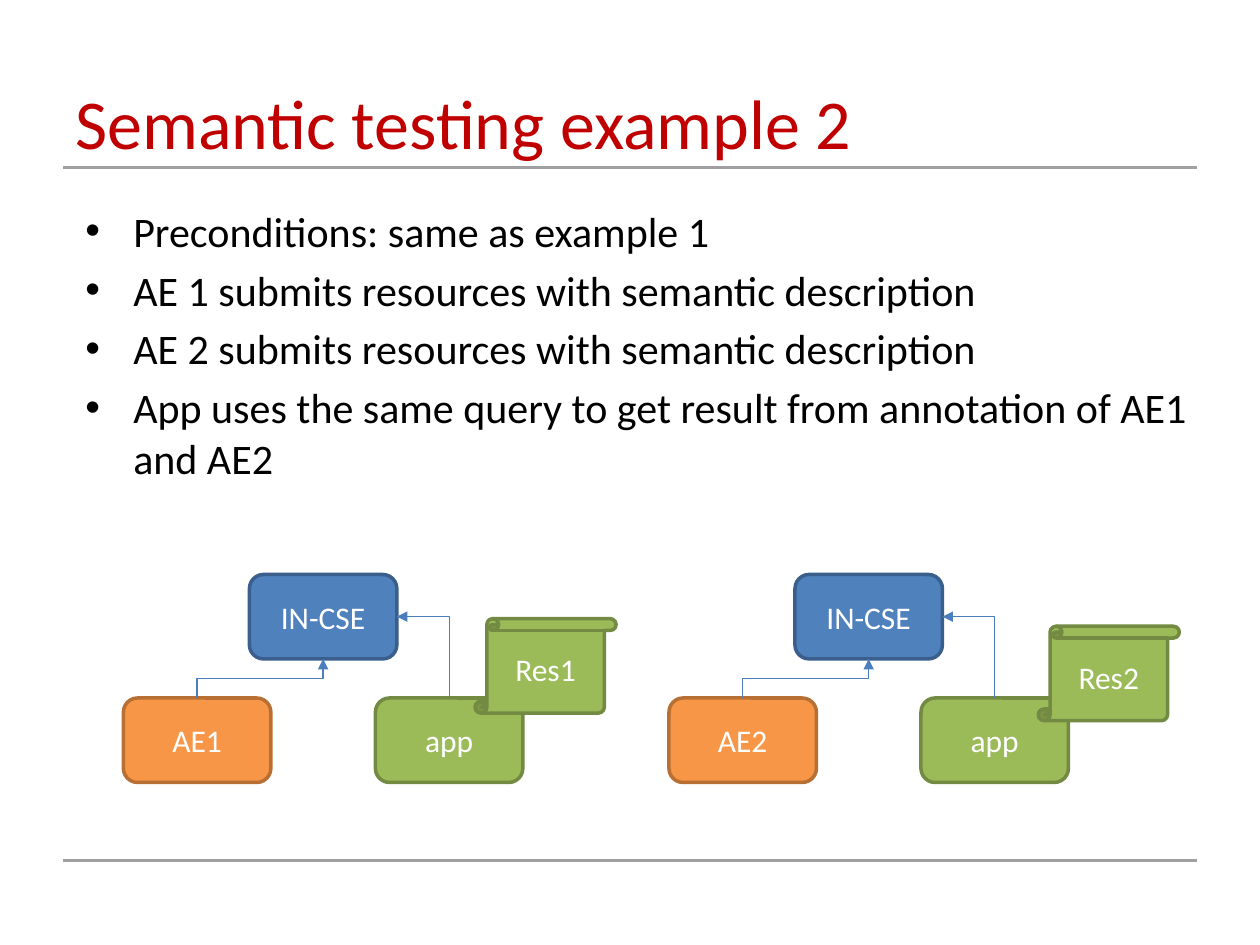
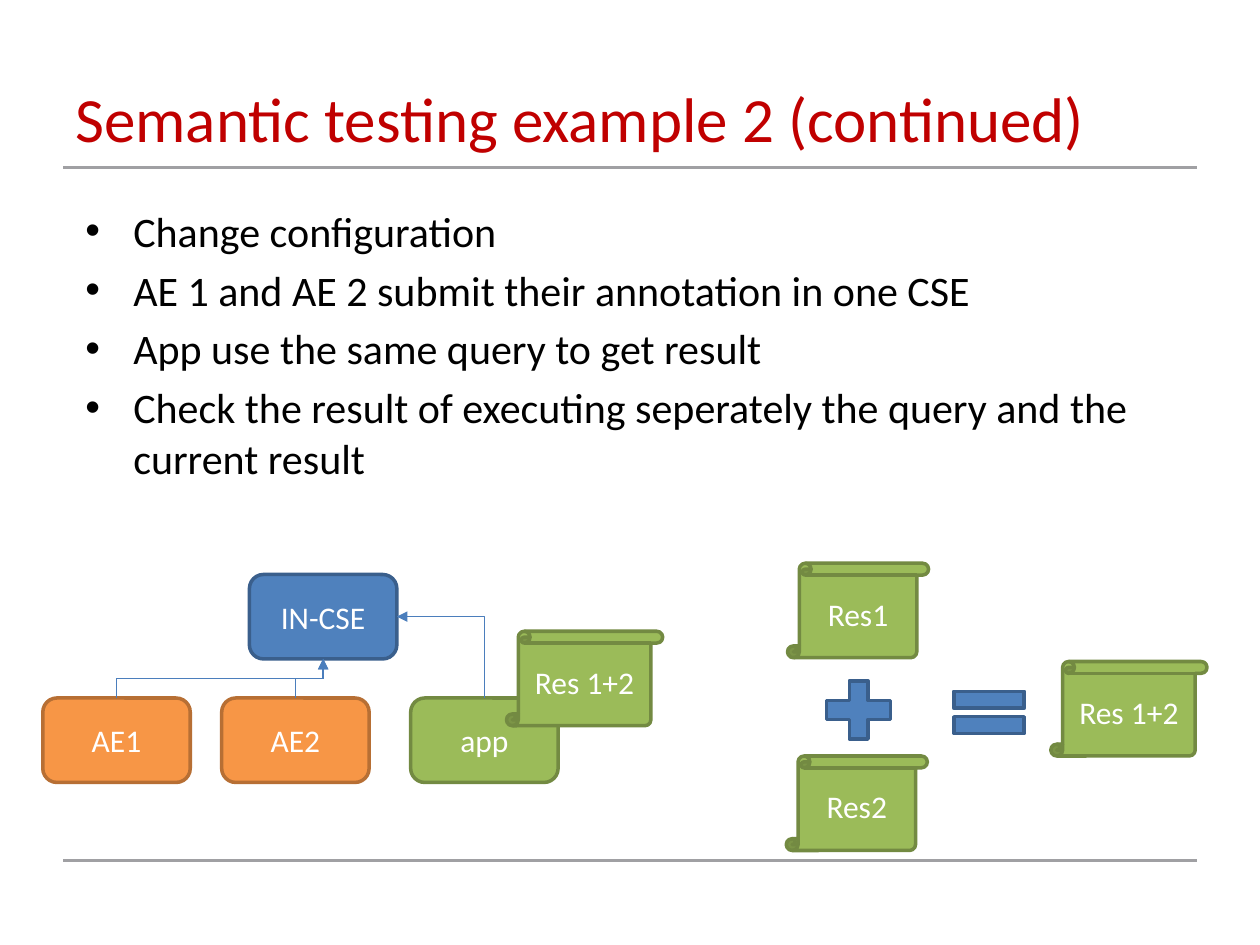
from dataclasses import dataclass

import pptx
import pptx.dml.color
import pptx.enum.shapes
import pptx.enum.text
import pptx.oxml.ns
import pptx.util
from lxml import etree

Inches = pptx.util.Inches
Pt = pptx.util.Pt
Preset = pptx.enum.shapes.MSO_SHAPE
Link = pptx.enum.shapes.MSO_CONNECTOR
Align = pptx.enum.text.PP_ALIGN
Anchor = pptx.enum.text.MSO_ANCHOR
qn = pptx.oxml.ns.qn


@dataclass(frozen=True)
class Paint:
    fill: str
    line: str


@dataclass(frozen=True)
class Theme:
    font: str = "Calibri"
    title: str = "C00000"
    body: str = "000000"
    label: str = "FFFFFF"
    rule: str = "A0A0A3"
    link: str = "4B7EBC"
    blue: Paint = Paint("4F81BD", "3A5F8C")
    orange: Paint = Paint("F79646", "B76F34")
    green: Paint = Paint("9BBB59", "738A42")
    title_size: int = 40
    long_title_size: int = 36
    body_size: int = 24
    label_size: int = 18
    rule_width: float = 1.75
    outline_width: float = 2
    link_width: float = 0.75


THEME = Theme()


@dataclass(frozen=True)
class Figure:
    preset: int
    paint: Paint
    left: float
    top: float
    width: float
    height: float
    text: str = ""


NODE_WIDTH, NODE_HEIGHT = 1.17, 0.67
HUB_TOP, NODE_TOP = 4.56, 5.54
PAIR_STEP = 4.33
TOP_SITE, BOTTOM_SITE, RIGHT_SITE = 0, 2, 3


def node(text: str, paint: Paint, left: float, top: float = NODE_TOP) -> Figure:
    return Figure(Preset.ROUNDED_RECTANGLE, paint, left, top, NODE_WIDTH, NODE_HEIGHT, text)


def scroll(text: str, left: float, top: float, width: float = 1.12) -> Figure:
    return Figure(Preset.VERTICAL_SCROLL, THEME.green, left, top, width, 0.75, text)


def rgb(value: str) -> pptx.dml.color.RGBColor:
    return pptx.dml.color.RGBColor.from_string(value)


def style_font(font, size: float, color: str) -> None:
    font.name = THEME.font
    font.size = Pt(size)
    font.color.rgb = rgb(color)


def style_line(connector, color: str, width: float) -> None:
    connector.line.color.rgb = rgb(color)
    connector.line.width = Pt(width)
    etree.SubElement(connector._element.spPr, qn("a:effectLst"))


def add_figure(page, figure: Figure):
    shape = page.shapes.add_shape(figure.preset, Inches(figure.left), Inches(figure.top),
                                  Inches(figure.width), Inches(figure.height))
    shape.shadow.inherit = False
    shape.fill.solid()
    shape.fill.fore_color.rgb = rgb(figure.paint.fill)
    shape.line.color.rgb = rgb(figure.paint.line)
    shape.line.width = Pt(THEME.outline_width)
    if figure.text:
        frame = shape.text_frame
        frame.text = figure.text
        frame.vertical_anchor = Anchor.MIDDLE
        paragraph = frame.paragraphs[0]
        paragraph.alignment = Align.CENTER
        style_font(paragraph.runs[0].font, THEME.label_size, THEME.label)
    return shape


def add_link(page, source, hub, to_side: bool) -> None:
    start_x, start_y = source.left + source.width // 2, source.top
    if to_side:
        end_x, end_y = hub.left + hub.width, hub.top + hub.height // 2
    else:
        end_x, end_y = hub.left + hub.width // 2, hub.top + hub.height
    connector = page.shapes.add_connector(Link.ELBOW, start_x, start_y, end_x, end_y)
    connector.begin_connect(source, TOP_SITE)
    connector.end_connect(hub, RIGHT_SITE if to_side else BOTTOM_SITE)
    rise, run = start_y - end_y, abs(end_x - start_x)
    connector.left = (start_x + end_x - rise) // 2
    connector.top = (start_y + end_y - run) // 2
    connector.width, connector.height = rise, run
    properties = connector._element.spPr
    frame = properties.find(qn("a:xfrm"))
    frame.set("rot", str((270 if to_side else 90) * 60000))
    frame.set("flipH", "0" if to_side else "1")
    frame.set("flipV", "1")
    if to_side:
        properties.find(qn("a:prstGeom")).set("prst", "bentConnector2")
    style_line(connector, THEME.link, THEME.link_width)
    etree.SubElement(properties.find(qn("a:ln")), qn("a:tailEnd"), type="triangle")


def add_network(page, hub: Figure, sources: list[Figure], app: Figure) -> None:
    hub_shape = add_figure(page, hub)
    for source in sources:
        add_link(page, add_figure(page, source), hub_shape, to_side=False)
    add_link(page, add_figure(page, app), hub_shape, to_side=True)


def add_text_box(page, left: float, top: float, width: float, height: float):
    box = page.shapes.add_textbox(Inches(left), Inches(top), Inches(width), Inches(height))
    box.text_frame.word_wrap = True
    return box.text_frame


def add_page(deck, title: str, title_size: int, bullets: list[str]):
    page = deck.slides.add_slide(deck.slide_layouts[6])
    for y in (6.83, 1.33):
        rule = page.shapes.add_connector(Link.STRAIGHT, Inches(0.5), Inches(y), Inches(9.5), Inches(y))
        style_line(rule, THEME.rule, THEME.rule_width)
    heading = add_text_box(page, 0.5, 0.58, 9, 1.25)
    heading.text = title
    style_font(heading.paragraphs[0].runs[0].font, title_size, THEME.title)
    body = add_text_box(page, 0.58, 1.58, 9, 2.52)
    body.text = "\n".join(bullets)
    for index, paragraph in enumerate(body.paragraphs):
        properties = paragraph._p.get_or_add_pPr()
        properties.set("marL", str(Inches(0.38)))
        properties.set("indent", str(Inches(-0.38)))
        etree.SubElement(properties, qn("a:buFont"), typeface="Arial")
        etree.SubElement(properties, qn("a:buChar"), char="•")
        if index:
            paragraph.space_before = Pt(0.2 * THEME.body_size)
        style_font(paragraph.runs[0].font, THEME.body_size, THEME.body)
    return page


def build_separate_page(deck) -> None:
    page = add_page(deck, "Semantic testing example 2", THEME.title_size, [
        "Preconditions: same as example 1",
        "AE 1 submits resources with semantic description",
        "AE 2 submits resources with semantic description",
        "App uses the same query to get result from annotation of AE1 and AE2",
    ])
    for index, name in enumerate(("AE1", "AE2")):
        shift = index * PAIR_STEP
        add_network(page, node("IN-CSE", THEME.blue, 1.98 + shift, HUB_TOP),
                    [node(name, THEME.orange, 0.98 + shift)],
                    node("app", THEME.green, 2.98 + shift))
    for resource in (scroll("Res1", 3.77, 4.91), scroll("Res2", 8.24, 4.97)):
        add_figure(page, resource)


def build_combined_page(deck) -> None:
    page = add_page(deck, "Semantic testing example 2 (continued)", THEME.long_title_size, [
        "Change configuration",
        "AE 1 and AE 2 submit their annotation in one CSE",
        "App use the same query to get result",
        "Check the result of executing seperately the query and the current result",
    ])
    add_network(page, node("IN-CSE", THEME.blue, 1.98, HUB_TOP),
                [node("AE1", THEME.orange, 0.34), node("AE2", THEME.orange, 1.76)],
                node("app", THEME.green, 3.26))
    for figure in (
        scroll("Res 1+2", 4.02, 5.01, 1.24),
        scroll("Res 1+2", 8.34, 5.25, 1.24),
        scroll("Res1", 6.25, 4.47),
        scroll("Res2", 6.24, 6),
        Figure(Preset.MATH_PLUS, THEME.blue, 6.47, 5.32, 0.69, 0.63),
        Figure(Preset.MATH_EQUAL, THEME.blue, 7.47, 5.37, 0.76, 0.57),
    ):
        add_figure(page, figure)


def main() -> None:
    deck = pptx.Presentation()
    deck.slide_width, deck.slide_height = Inches(10), Inches(7.5)
    build_separate_page(deck)
    build_combined_page(deck)
    deck.save("out.pptx")


if __name__ == "__main__":
    main()
